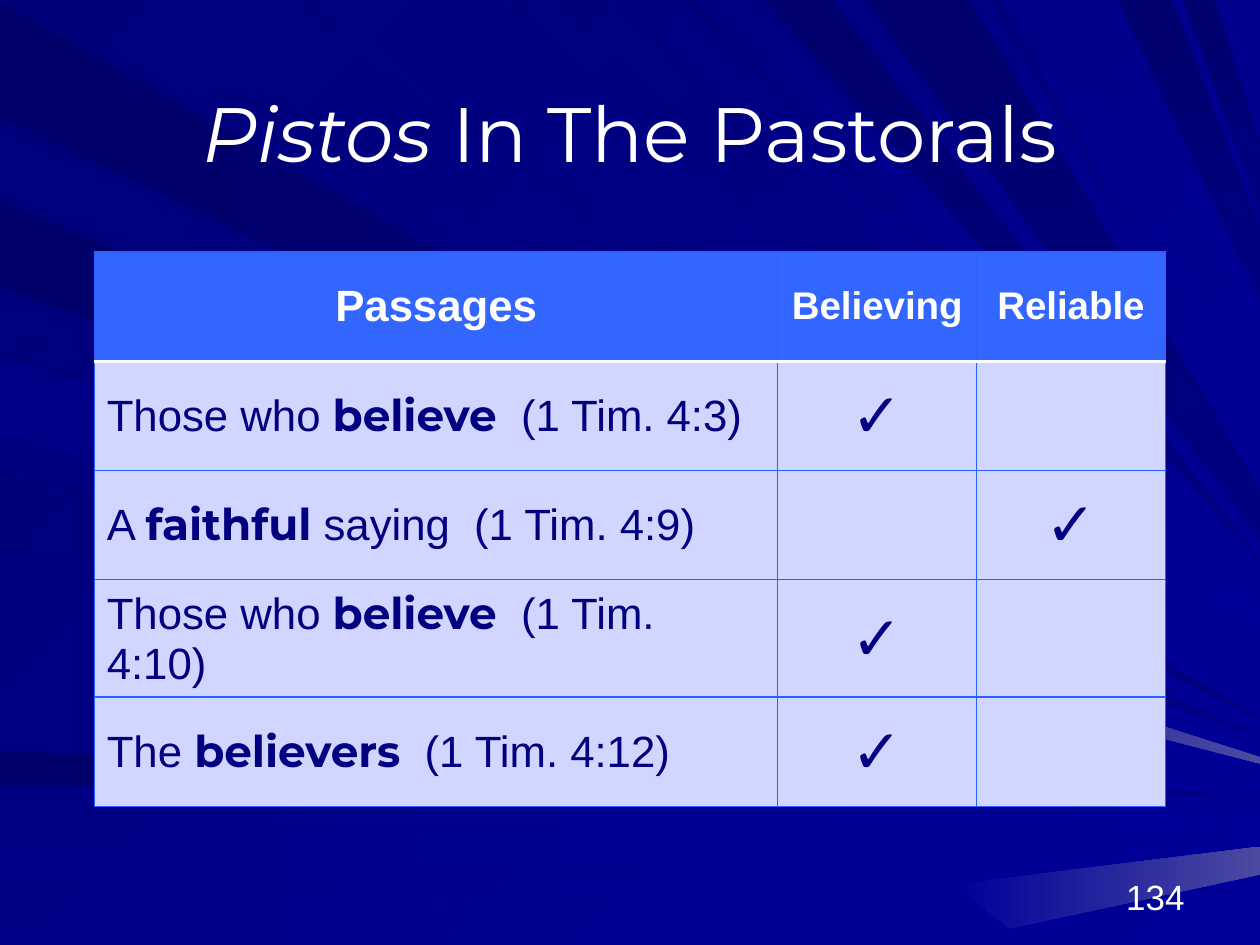
from dataclasses import dataclass

from lxml.etree import SubElement
from pptx import Presentation
from pptx.dml.color import RGBColor
from pptx.enum.text import MSO_ANCHOR as Anchor, PP_ALIGN as Align
from pptx.oxml.ns import qn
from pptx.util import Cm, Pt


@dataclass(frozen=True)
class Theme:
    white: str = "FFFFFF"
    navy: str = "000080"
    header_fill: str = "3366FF"
    body_fill: str = "D0D6FF"
    border: str = "2D61FE"
    # Gradients: start colour, end colour, clockwise angle
    background: tuple = ("000078", "000099", 45)
    shadow: tuple = ("00006B", "000080", 0)
    shadow_down: tuple = ("00006F", "000080", 90)
    beam: tuple = ("000078", "000099", 45)
    glow: tuple = ("000087", "000099", 0)
    glint: tuple = ("000099", "4A4AA1", 0)
    body_font: str = "Arial"
    accent_font: str = "Montserrat"
    title_size: int = 44
    check_size: int = 35
    body_size: int = 25
    header_size: int = 22
    number_size: int = 20


THEME = Theme()
GRID = Cm(2.54) / 100  # the backdrop is drawn on a 1000 by 750 grid
RIGHT = 1000

# Rays run from the left or top edge to the right edge, back to front:
# edge, start, width there, end height, width at the end, gradient
RAYS = [
    ("left", 2, 91, 569, 1, THEME.shadow),
    ("top", 26, 75, 562, 1, THEME.beam),
    ("left", 596, 27, 631, 1, THEME.shadow),
    ("left", 665, 39, 643, 8, THEME.glow),
    ("left", 735, 15, 662, 1, THEME.glow),
    ("left", 258, 12, 589, 1, THEME.beam),
    ("left", 159, 69, 584, 1, THEME.shadow),
    ("top", 398, 18, 515, 6, THEME.beam),
    ("top", 426, 66, 479, 28, THEME.beam),
    ("top", 540, 12, 463, 1, THEME.beam),
    ("top", 606, 55, 445, 1, THEME.shadow_down),
    ("top", 887, 43, 183, 54, THEME.shadow_down),
    ("top", 939, 25, 114, 53, THEME.shadow_down),
    ("left", 278, 64, 596, 6, THEME.beam),
    ("left", 374, 63, 605, 1, THEME.beam),
    ("left", 552, 8, 621, 2, THEME.glow),
    ("top", 225, 22, 547, 5, THEME.beam),
    ("top", 577, 11, 453, 1, THEME.glow),
    ("top", 686, 84, 390, 38, THEME.shadow_down),
    ("top", 785, 7, 354, 6, THEME.beam),
    ("top", 815, 9, 335, 1, THEME.glow),
    ("top", 865, 7, 249, 9, THEME.glow),
    ("left", 283, 64, 601, 5, THEME.glow),
]

# Pale reflections at the right edge
GLINTS = [
    [(RIGHT, 694), (RIGHT, 672), (756, 702), (801, 737)],
    [(RIGHT, 601), (637, 485), (633, 511), (RIGHT, 606)],
]

# Passage: text before, key word, text after, column of the check mark
PASSAGES = [
    ("Those who ", "believe", "  (1 Tim. 4:3)", 1),
    ("A ", "faithful", " saying  (1 Tim. 4:9)", 2),
    ("Those who ", "believe", "  (1 Tim. 4:10)", 1),
    ("The ", "believers", "  (1 Tim. 4:12)", 1),
]


def paint(fill, start, end=None, angle=0):
    """Fill with one colour, or with a gradient at a clockwise angle."""
    if end is None:
        fill.solid()
        fill.fore_color.rgb = RGBColor.from_string(start)
        return
    fill.gradient()
    fill.gradient_angle = (360 - angle) % 360
    for stop, color in zip(fill.gradient_stops, (start, end)):
        stop.color.rgb = RGBColor.from_string(color)


def add_run(paragraph, text, size, color, font=THEME.body_font, bold=False, italic=False):
    run = paragraph.add_run()
    run.text = text
    run.font.name, run.font.size = font, Pt(size)
    run.font.bold, run.font.italic = bold, italic
    run.font.color.rgb = RGBColor.from_string(color)


def add_text_box(slide, box, anchor, alignment):
    frame = slide.shapes.add_textbox(*box).text_frame
    frame.word_wrap = True
    frame.vertical_anchor = anchor
    paragraph = frame.paragraphs[0]
    paragraph.alignment = alignment
    return paragraph


def add_polygon(shapes, corners, gradient):
    builder = shapes.build_freeform(*corners[0], scale=GRID)
    builder.add_line_segments(corners[1:], close=True)
    polygon = builder.convert_to_shape()
    polygon.shadow.inherit = False
    polygon.line.fill.background()
    paint(polygon.fill, *gradient)


def add_backdrop(slide):
    paint(slide.background.fill, *THEME.background)
    shapes = slide.shapes.add_group_shape().shapes
    for edge, start, width, end, end_width, gradient in RAYS:
        far = [(RIGHT, end), (RIGHT, end + end_width)]
        if edge == "left":
            near = [(0, start + width), (0, start)]
        else:
            near = [(start, 0), (start + width, 0)]
            far.sort()
        add_polygon(shapes, near + far, gradient)
    for corners in GLINTS:
        add_polygon(shapes, corners, THEME.glint)


def add_title(slide, box):
    paragraph = add_text_box(slide, box, Anchor.MIDDLE, Align.CENTER)
    for text, italic in (("Pistos", True), (" In The Pastorals", False)):
        add_run(paragraph, text, THEME.title_size, THEME.white, THEME.accent_font, italic=italic)


def add_slide_number(slide, box):
    paragraph = add_text_box(slide, box, Anchor.BOTTOM, Align.RIGHT)
    add_run(paragraph, "134", THEME.number_size, THEME.white)


def style_cell(cell, row):
    cell.vertical_anchor = Anchor.MIDDLE
    paint(cell.fill, THEME.body_fill if row else THEME.header_fill)
    thin, rule = (THEME.border, 0.75), (THEME.white, 2)
    borders = {"L": thin, "R": thin, "T": rule if row == 1 else thin, "B": thin if row else rule}
    properties = cell._tc.get_or_add_tcPr()
    for index, (side, (color, width)) in enumerate(borders.items()):
        line = SubElement(properties, qn(f"a:ln{side}"), w=str(Pt(width)))
        SubElement(SubElement(line, qn("a:solidFill")), qn("a:srgbClr"), val=color)
        properties.insert(index, line)


def add_passage_table(slide, box):
    table = slide.shapes.add_table(len(PASSAGES) + 1, 3, *box).table
    table.horz_banding = False
    for column, width in zip(table.columns, (13.78, 4.01, 3.8)):
        column.width = Cm(width)
    for row_index, row in enumerate(table.rows):
        row.height = Cm(2.2)
        for cell in row.cells:
            style_cell(cell, row_index)

    # Header row
    headers = (("Passages", THEME.body_size), ("Believing", THEME.header_size),
               ("Reliable", THEME.header_size))
    for column, (label, size) in enumerate(headers):
        paragraph = table.cell(0, column).text_frame.paragraphs[0]
        paragraph.alignment = Align.CENTER
        add_run(paragraph, label, size, THEME.white, bold=True)

    # Passages with their check marks
    for row, (before, word, after, check_column) in enumerate(PASSAGES, 1):
        paragraph = table.cell(row, 0).text_frame.paragraphs[0]
        add_run(paragraph, before, THEME.body_size, THEME.navy)
        add_run(paragraph, word, THEME.body_size, THEME.navy, THEME.accent_font, bold=True)
        add_run(paragraph, after, THEME.body_size, THEME.navy)
        paragraph = table.cell(row, check_column).text_frame.paragraphs[0]
        paragraph.alignment = Align.CENTER
        add_run(paragraph, "✓", THEME.check_size, THEME.navy, THEME.accent_font)


def main():
    presentation = Presentation()
    presentation.slide_width, presentation.slide_height = Cm(25.4), Cm(19.05)
    slide = presentation.slides.add_slide(presentation.slide_layouts[6])
    add_backdrop(slide)
    add_slide_number(slide, (Cm(18.2), Cm(17.36), Cm(5.93), Cm(1.27)))
    add_title(slide, (Cm(1.9), Cm(1.06), Cm(21.6), Cm(3.18)))
    add_passage_table(slide, (Cm(1.9), Cm(5.08), Cm(21.59), Cm(11)))
    presentation.save("out.pptx")


if __name__ == "__main__":
    main()
